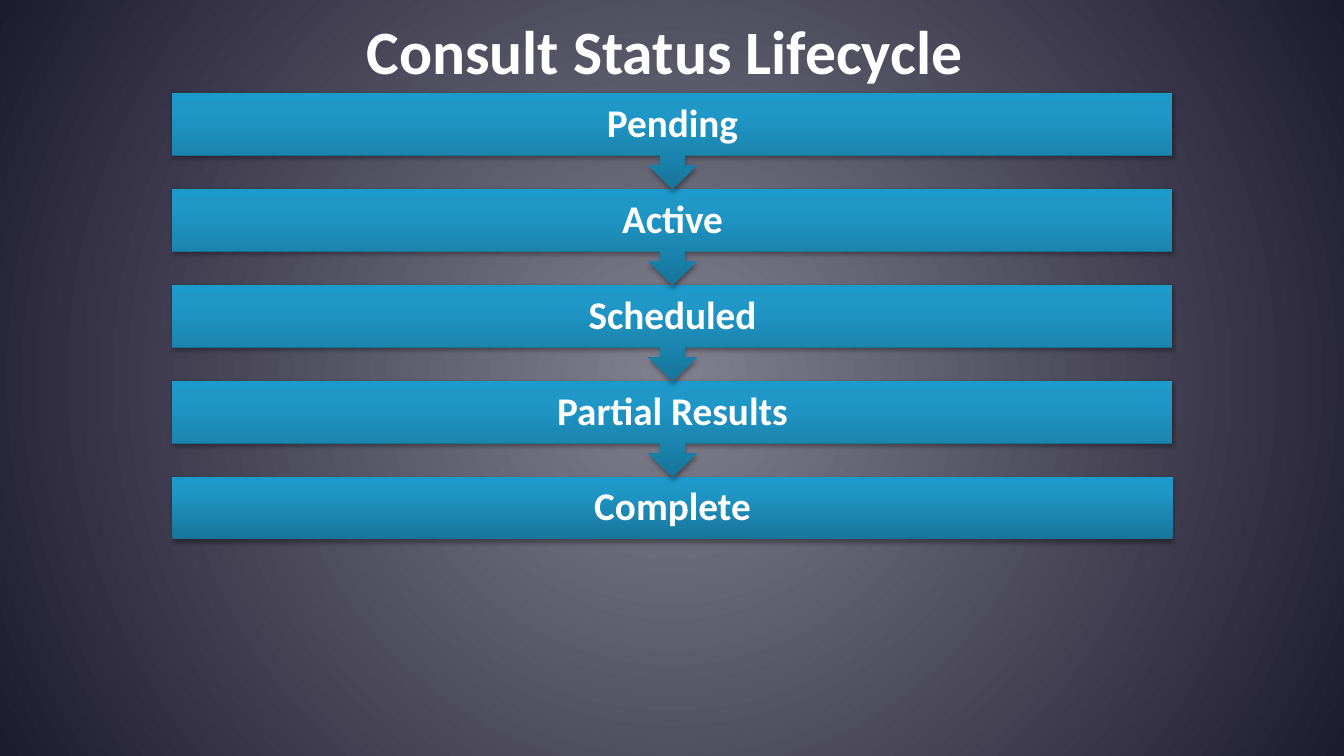
from lxml.etree import SubElement
from pptx import Presentation
from pptx.dml.color import RGBColor
from pptx.enum.text import MSO_ANCHOR, PP_ALIGN
from pptx.oxml import parse_xml
from pptx.oxml.ns import nsdecls, qn
from pptx.util import Inches, Pt

COLORS = {
    "text": "FFFFFF", "shadow": "000000",
    "glow": "81808E", "night": "1D1B2E",
    "bar_dark": "18759A", "bar_mid": "1F98C8", "bar_light": "1C9ACC",
}
FONT = "Calibri"
STATUSES = ["Pending", "Active", "Scheduled", "Partial Results", "Complete"]

# Bar geometry in inches
LEFT, RIGHT, CENTER = 1.71, 11.63, 6.67
FIRST_TOP, LAST_TOP = 0.92, 4.73
STEP = (LAST_TOP - FIRST_TOP) / (len(STATUSES) - 1)
BAR_HEIGHT, NECK_HEIGHT, TIP_HEIGHT = 0.62, 0.72, 0.96
NECK_HALF, HEAD_HALF = 0.12, 0.24


def gradient(stops, direction):
    """Return a gradient fill; stops are (percent, colour name)."""
    stop_xml = "".join(
        f'<a:gs pos="{percent * 1000}"><a:srgbClr val="{COLORS[name]}"/></a:gs>'
        for percent, name in stops)
    return parse_xml(f'<a:gradFill {nsdecls("a")} rotWithShape="1">'
                     f'<a:gsLst>{stop_xml}</a:gsLst>{direction}</a:gradFill>')


def set_background(slide):
    slide.background.fill.solid()
    properties = slide.element.find(".//" + qn("p:bgPr"))
    properties[0] = gradient(
        [(0, "glow"), (100, "night")],
        '<a:path path="circle"><a:fillToRect l="50000" t="50000" r="50000" b="50000"/></a:path>')


def add_shadow(shape):
    shape.shadow.inherit = False
    effects = shape.element.spPr.find(qn("a:effectLst"))
    shadow = SubElement(effects, qn("a:outerShdw"), blurRad=str(Pt(3.1)),
                        dist=str(Pt(1.8)), dir="5400000", rotWithShape="0")
    color = SubElement(shadow, qn("a:srgbClr"), val=COLORS["shadow"])
    SubElement(color, qn("a:alpha"), val="35000")


def write(shape, text, size):
    """Put centred bold text in a shape."""
    frame = shape.text_frame
    frame.word_wrap = True
    frame.vertical_anchor = MSO_ANCHOR.MIDDLE
    paragraph = frame.paragraphs[0]
    paragraph.text = text
    paragraph.alignment = PP_ALIGN.CENTER
    paragraph.font.name = FONT
    paragraph.font.size = Pt(size)
    paragraph.font.bold = True
    paragraph.font.color.rgb = RGBColor.from_string(COLORS["text"])
    return paragraph


def add_title(slide, text):
    box = slide.shapes.add_textbox(
        Inches(0), Inches(-0.01), Inches(13.33), Inches(1.01))
    write(box, text, 44)


def add_status(slide, text, top, has_arrow):
    """Draw a status bar, with a down arrow below it if another follows."""
    bottom, neck, tip = (top + height for height in (BAR_HEIGHT, NECK_HEIGHT, TIP_HEIGHT))
    outline = [(LEFT, top), (RIGHT, top), (RIGHT, bottom)]
    if has_arrow:
        outline += [
            (CENTER + NECK_HALF, bottom), (CENTER + NECK_HALF, neck),
            (CENTER + HEAD_HALF, neck), (CENTER, tip), (CENTER - HEAD_HALF, neck),
            (CENTER - NECK_HALF, neck), (CENTER - NECK_HALF, bottom)]
    outline.append((LEFT, bottom))
    points = [(Inches(x), Inches(y)) for x, y in outline]
    builder = slide.shapes.build_freeform(*points[0])
    builder.add_line_segments(points[1:], close=True)
    shape = builder.convert_to_shape()

    # Fill, line and shadow
    shape.line.fill.background()
    shape.element.spPr.insert(2, gradient(
        [(0, "bar_dark"), (80, "bar_mid"), (100, "bar_light")],
        '<a:lin ang="16200000" scaled="0"/>'))
    add_shadow(shape)

    # Label
    frame = shape.text_frame
    frame.margin_left = frame.margin_right = frame.margin_top = Inches(0.22)
    frame.margin_bottom = Inches(0.55 if has_arrow else 0.22)
    write(shape, text, 28).line_spacing = 0.9


def main():
    presentation = Presentation()
    presentation.slide_width = Inches(13.33)
    presentation.slide_height = Inches(7.5)
    slide = presentation.slides.add_slide(presentation.slide_layouts[6])
    set_background(slide)
    add_title(slide, "Consult Status Lifecycle ")

    # Last bar first, so that each arrow tip lies over the bar below
    last = len(STATUSES) - 1
    for index in range(last, -1, -1):
        add_status(slide, STATUSES[index], FIRST_TOP + index * STEP, index < last)

    presentation.save("out.pptx")


if __name__ == "__main__":
    main()
